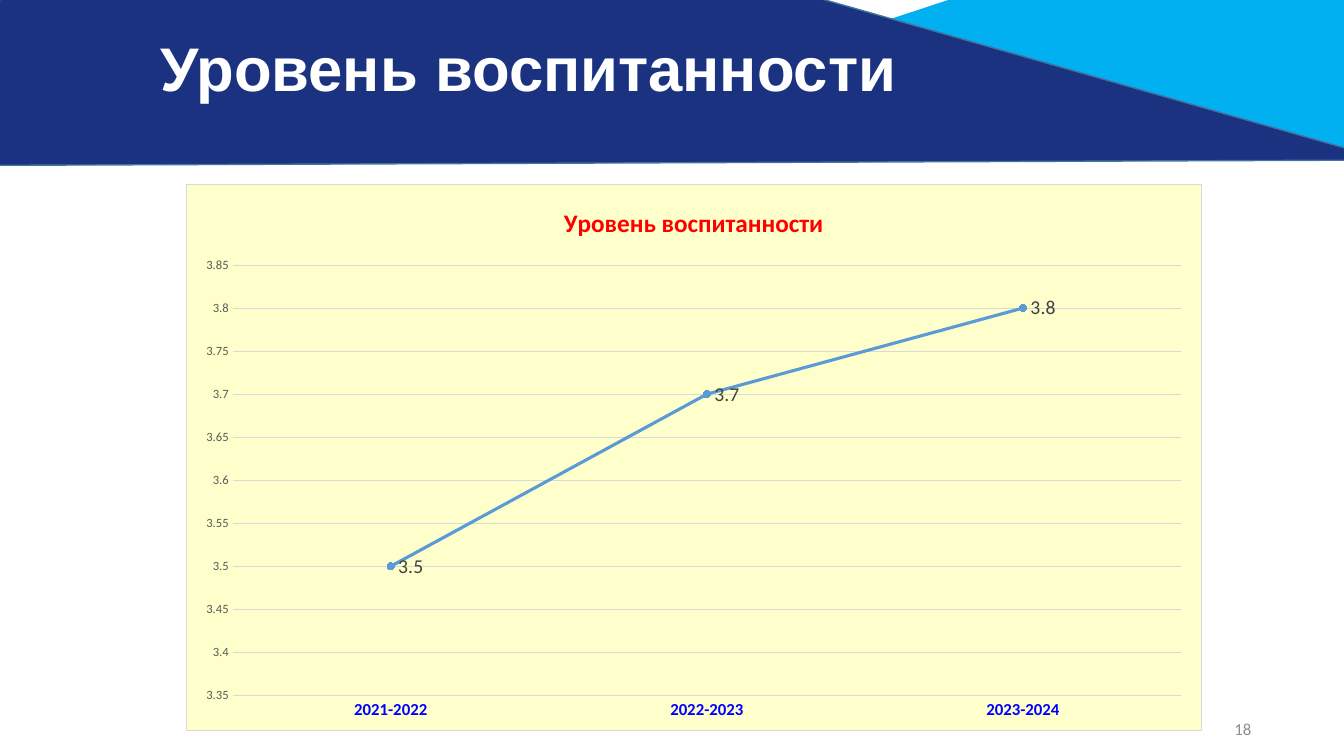
from dataclasses import dataclass

import pptx
import pptx.chart.data
import pptx.dml.color
import pptx.enum.chart
import pptx.enum.shapes
import pptx.enum.text
import pptx.oxml
import pptx.oxml.ns
import pptx.util

HEADING = "Уровень воспитанности"
LEVELS = {"2021-2022": 3.5, "2022-2023": 3.7, "2023-2024": 3.8}
NAVY, SKY, BAND_EDGE = "1B3281", "00B0F0", "43739E"
CREAM, GRID, SERIES = "FFFFCC", "D9D9D9", "5B9BD5"
ALIGN = pptx.enum.text.PP_ALIGN
ANCHOR = pptx.enum.text.MSO_ANCHOR
Inches = pptx.util.Inches


@dataclass
class Area:
    left: float
    top: float
    width: float
    height: float

    def lengths(self) -> tuple:
        return tuple(Inches(side) for side in (self.left, self.top, self.width, self.height))


def color(code: str) -> pptx.dml.color.RGBColor:
    return pptx.dml.color.RGBColor.from_string(code)


def style_font(font, size: float, code: str, name: str = "Calibri", bold: bool = False) -> None:
    font.size = pptx.util.Pt(size)
    font.name = name
    font.bold = bold
    font.color.rgb = color(code)


def style_line(line, code: str, width: float) -> None:
    line.color.rgb = color(code)
    line.width = pptx.util.Pt(width)


def fill_shape(shape, code: str) -> None:
    shape.shadow.inherit = False
    shape.fill.solid()
    shape.fill.fore_color.rgb = color(code)


def add_text(page, text: str, area: Area, *, size: float, code: str, name: str = "Calibri",
             bold: bool = False, align=ALIGN.LEFT, anchor=ANCHOR.TOP) -> None:
    frame = page.shapes.add_textbox(*area.lengths()).text_frame
    frame.word_wrap = True
    frame.vertical_anchor = anchor
    para = frame.paragraphs[0]
    para.alignment = align
    span = para.add_run()
    span.text = text
    style_font(span.font, size, code, name, bold)


def add_banner(page) -> None:
    """Draw the sky-blue corner and the navy band over it."""
    builder = page.shapes.build_freeform(Inches(4.59), Inches(1.59))
    builder.add_line_segments([(Inches(13.37), Inches(1.59)), (Inches(13.37), Inches(-1.31))])
    corner = builder.convert_to_shape()
    fill_shape(corner, SKY)
    corner.line.fill.background()

    band = page.shapes.add_shape(pptx.enum.shapes.MSO_SHAPE.DIAGONAL_STRIPE,
                                 *Area(-0.19, -0.36, 13.67, 3.95).lengths())
    band.rotation = 15.9
    fill_shape(band, NAVY)
    style_line(band.line, BAND_EDGE, 1)


def style_chart_area(chart, fill: str, border: str, width: float) -> None:
    """Give the whole chart a square-cornered filled frame."""
    space = chart._chartSpace
    namespaces = pptx.oxml.ns.nsdecls("c", "a")
    space.find(pptx.oxml.ns.qn("c:date1904")).addnext(
        pptx.oxml.parse_xml(f'<c:roundedCorners {namespaces} val="0"/>'))
    space.find(pptx.oxml.ns.qn("c:chart")).addnext(pptx.oxml.parse_xml(
        f'<c:spPr {namespaces}><a:solidFill><a:srgbClr val="{fill}"/></a:solidFill>'
        f'<a:ln w="{int(pptx.util.Pt(width))}">'
        f'<a:solidFill><a:srgbClr val="{border}"/></a:solidFill></a:ln></c:spPr>'))


def style_axes(chart) -> None:
    years, scale = chart.category_axis, chart.value_axis
    for axis in (years, scale):
        axis.major_tick_mark = axis.minor_tick_mark = pptx.enum.chart.XL_TICK_MARK.NONE
    style_font(years.tick_labels.font, 12, "0000FF", bold=True)
    style_line(years.format.line, GRID, 0.75)
    style_font(scale.tick_labels.font, 9, "595959")
    scale.format.line.fill.background()
    scale.minimum_scale, scale.maximum_scale, scale.major_unit = 3.35, 3.85, 0.05
    style_line(scale.major_gridlines.format.line, GRID, 0.75)


def style_series(series) -> None:
    series.smooth = False
    style_line(series.format.line, SERIES, 2.25)
    marker = series.marker
    marker.style = pptx.enum.chart.XL_MARKER_STYLE.CIRCLE
    marker.size = 5
    marker.format.fill.solid()
    marker.format.fill.fore_color.rgb = color(SERIES)
    style_line(marker.format.line, SERIES, 0.75)
    labels = series.data_labels
    labels.show_value = True
    labels.position = pptx.enum.chart.XL_LABEL_POSITION.RIGHT
    style_font(labels.font, 14, "404040")


def add_level_chart(page, area: Area) -> None:
    levels = pptx.chart.data.CategoryChartData()
    levels.categories = list(LEVELS)
    levels.add_series(HEADING, list(LEVELS.values()))
    chart = page.shapes.add_chart(pptx.enum.chart.XL_CHART_TYPE.LINE_MARKERS,
                                  *area.lengths(), levels).chart
    style_font(chart.font, 10, "000000")
    chart.has_legend = False
    chart.has_title = True
    title = chart.chart_title.text_frame
    title.text = HEADING
    style_font(title.paragraphs[0].runs[0].font, 18, "FF0000", bold=True)
    style_chart_area(chart, CREAM, GRID, 0.75)
    style_axes(chart)
    chart.plots[0].vary_by_categories = False
    style_series(chart.plots[0].series[0])


def main() -> None:
    deck = pptx.Presentation()
    deck.slide_width, deck.slide_height = Inches(13.33), Inches(7.5)
    page = deck.slides.add_slide(deck.slide_layouts[6])
    add_text(page, "18", Area(9.51, 7.03, 3, 0.4), size=12, code="8C8C8C",
             align=ALIGN.RIGHT, anchor=ANCHOR.MIDDLE)
    add_banner(page)
    add_text(page, HEADING, Area(-0.96, 0.25, 12.41, 0.84), size=44, code="FFFFFF",
             name="Arial", bold=True, align=ALIGN.CENTER)
    add_level_chart(page, Area(1.84, 1.83, 10.08, 5.42))
    deck.save("out.pptx")


if __name__ == "__main__":
    main()
